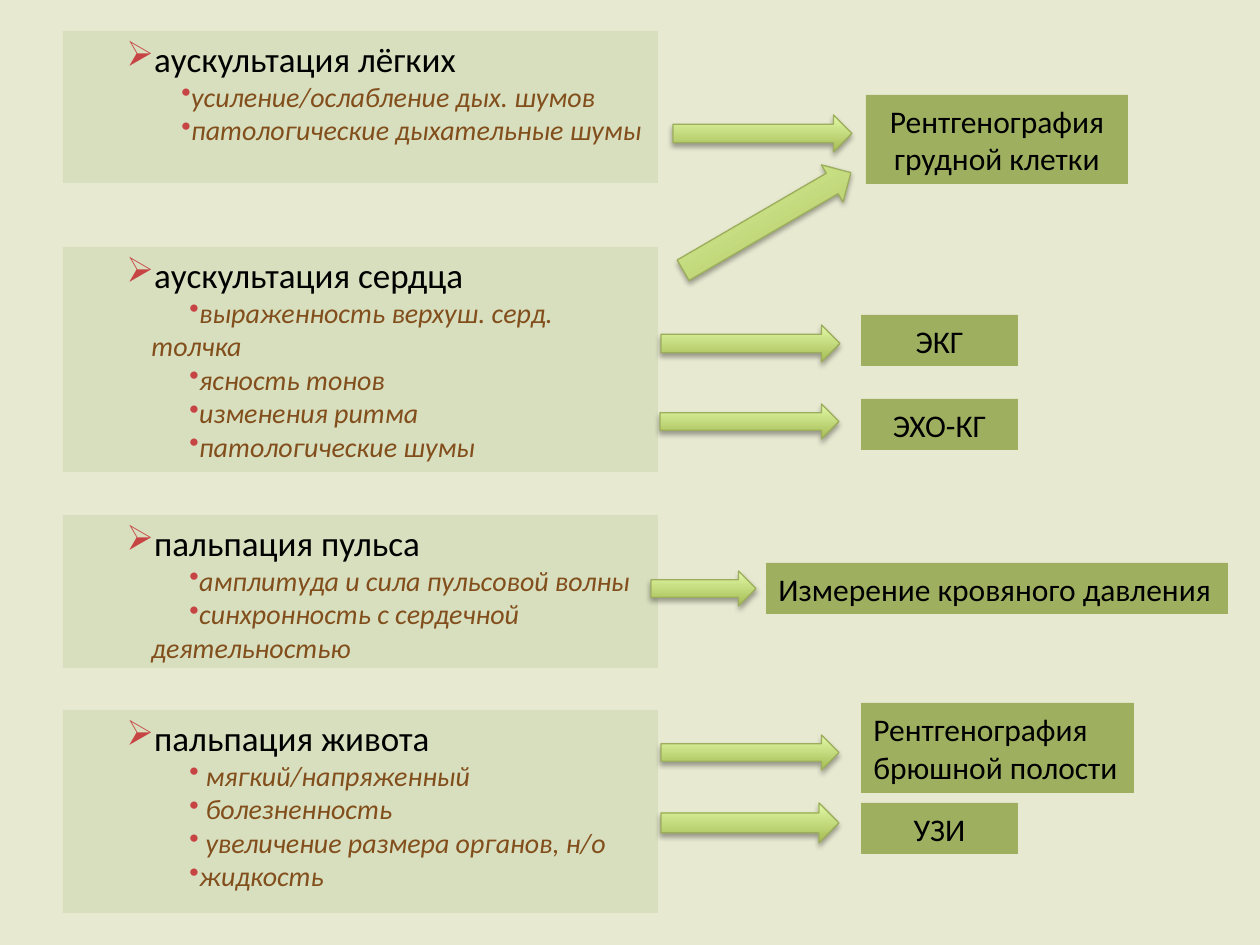
from lxml.etree import SubElement
from pptx import Presentation
from pptx.dml.color import RGBColor
from pptx.enum.shapes import MSO_SHAPE
from pptx.enum.text import MSO_ANCHOR, PP_ALIGN
from pptx.oxml.ns import qn
from pptx.util import Inches, Pt

BACKGROUND = RGBColor(0xE8, 0xE9, 0xD1)
PANEL = RGBColor(0xD8, 0xDF, 0xBF)
LABEL = RGBColor(0x9E, 0xB0, 0x60)
BULLET = RGBColor(0xC7, 0x44, 0x44)
BLACK = RGBColor(0x00, 0x00, 0x00)
BROWN = RGBColor(0x82, 0x4F, 0x1C)
ARROW_DARK = RGBColor(0xA5, 0xBC, 0x54)
ARROW_LIGHT = RGBColor(0xE3, 0xF9, 0xA8)
ARROW_EDGE = RGBColor(0x9C, 0xAE, 0x5C)

SLIDE_WIDTH, SLIDE_HEIGHT = 1260, 945
SCALE = Inches(10) / SLIDE_WIDTH
PANEL_LEFT, PANEL_WIDTH = 63, 595
HEADING_INDENT, FIRST_LINE = 13, 38

HEADING_FONT = {"name": "Calibri", "size": Pt(20)}
SIGN_FONT = {"name": "Calibri", "size": Pt(16), "italic": True}
LABEL_FONT = {"name": "Calibri", "size": Pt(18)}

EXAMS = [
    (31, 152, 68, "аускультация лёгких",
     ["усиление/ослабление дых. шумов", "патологические дыхательные шумы"]),
    (247, 225, 76, "аускультация сердца",
     ["выраженность верхуш. серд. толчка", "ясность тонов",
      "изменения ритма", "патологические шумы"]),
    (515, 153, 76, "пальпация пульса",
     ["амплитуда и сила пульсовой волны",
      "синхронность с сердечной деятельностью"]),
    (710, 203, 76, "пальпация живота",
     [" мягкий/напряженный", " болезненность",
      " увеличение размера органов, н/о", "жидкость"]),
]

TESTS = [
    ((866, 95, 262, 89), "Рентгенография грудной клетки", PP_ALIGN.CENTER, True),
    ((861, 315, 157, 51), "ЭКГ", PP_ALIGN.CENTER, True),
    ((861, 399, 157, 51), "ЭХО-КГ", PP_ALIGN.CENTER, True),
    ((766, 563, 462, 51), "Измерение кровяного давления", PP_ALIGN.LEFT, False),
    ((861, 703, 273, 90), "Рентгенография брюшной полости", PP_ALIGN.LEFT, True),
    ((861, 803, 157, 51), "УЗИ", PP_ALIGN.CENTER, True),
]

ARROWS = [
    ((673, 115, 179, 37), 0, 0.5),
    ((670, 200, 194, 43), 329.8, 0.55),
    ((661, 325, 179, 37), 0, 0.5),
    ((660, 404, 179, 35), 0, 0.5),
    ((651, 571, 105, 35), 0, 0.5),
    ((661, 735, 178, 35), 0, 0.5),
    ((661, 803, 178, 40), 0, 0.5),
]


def px(length):
    return round(length * SCALE)


def add_box(slide, area, color, wrap=True):
    box = slide.shapes.add_textbox(*map(px, area))
    box.fill.solid()
    box.fill.fore_color.rgb = color
    box.text_frame.word_wrap = wrap
    return box.text_frame


def write(paragraph, text, font_format, color):
    run = paragraph.add_run()
    run.text = text
    for key, value in font_format.items():
        setattr(run.font, key, value)
    run.font.color.rgb = color


def set_bullet(paragraph, mark, indent):
    properties = paragraph._p.get_or_add_pPr()
    properties.set("marL", str(px(indent)))
    properties.set("indent", str(px(FIRST_LINE)))
    bullet_color = SubElement(properties, qn("a:buClr"))
    SubElement(bullet_color, qn("a:srgbClr"), val=str(BULLET))
    SubElement(properties, qn("a:buChar"), char=mark)


def add_exam(slide, top, height, sign_indent, heading, signs):
    frame = add_box(slide, (PANEL_LEFT, top, PANEL_WIDTH, height), PANEL)
    title = frame.paragraphs[0]
    set_bullet(title, "➢", HEADING_INDENT)
    write(title, heading, HEADING_FONT, BLACK)
    for sign in signs:
        line = frame.add_paragraph()
        line.level = 1
        set_bullet(line, "•", sign_indent)
        write(line, sign, SIGN_FONT, BROWN)


def add_test(slide, area, name, alignment, wrap):
    frame = add_box(slide, area, LABEL, wrap)
    frame.vertical_anchor = MSO_ANCHOR.MIDDLE
    frame.paragraphs[0].alignment = alignment
    write(frame.paragraphs[0], name, LABEL_FONT, BLACK)


def add_arrow(slide, area, rotation, thickness):
    arrow = slide.shapes.add_shape(MSO_SHAPE.RIGHT_ARROW, *map(px, area))
    arrow.rotation = rotation
    arrow.adjustments[0] = thickness
    arrow.fill.gradient()
    arrow.fill.gradient_angle = 90
    stops = zip(arrow.fill.gradient_stops, (ARROW_DARK, ARROW_LIGHT), (0, 1))
    for stop, color, position in stops:
        stop.color.rgb = color
        stop.position = position
    arrow.line.color.rgb = ARROW_EDGE
    arrow.line.width = Pt(0.75)
    arrow.shadow.inherit = False
    effects = arrow._element.spPr.find(qn("a:effectLst"))
    shadow = SubElement(effects, qn("a:outerShdw"), blurRad=str(Pt(3.1)),
                        dist=str(Pt(1.8)), dir="5400000", rotWithShape="0")
    shadow_color = SubElement(shadow, qn("a:srgbClr"), val=str(BLACK))
    SubElement(shadow_color, qn("a:alpha"), val="35000")


def main():
    deck = Presentation()
    deck.slide_width, deck.slide_height = px(SLIDE_WIDTH), px(SLIDE_HEIGHT)
    slide = deck.slides.add_slide(deck.slide_layouts[6])
    slide.background.fill.solid()
    slide.background.fill.fore_color.rgb = BACKGROUND
    for add_part, parts in ((add_exam, EXAMS), (add_test, TESTS), (add_arrow, ARROWS)):
        for part in parts:
            add_part(slide, *part)
    deck.save("out.pptx")


if __name__ == "__main__":
    main()
